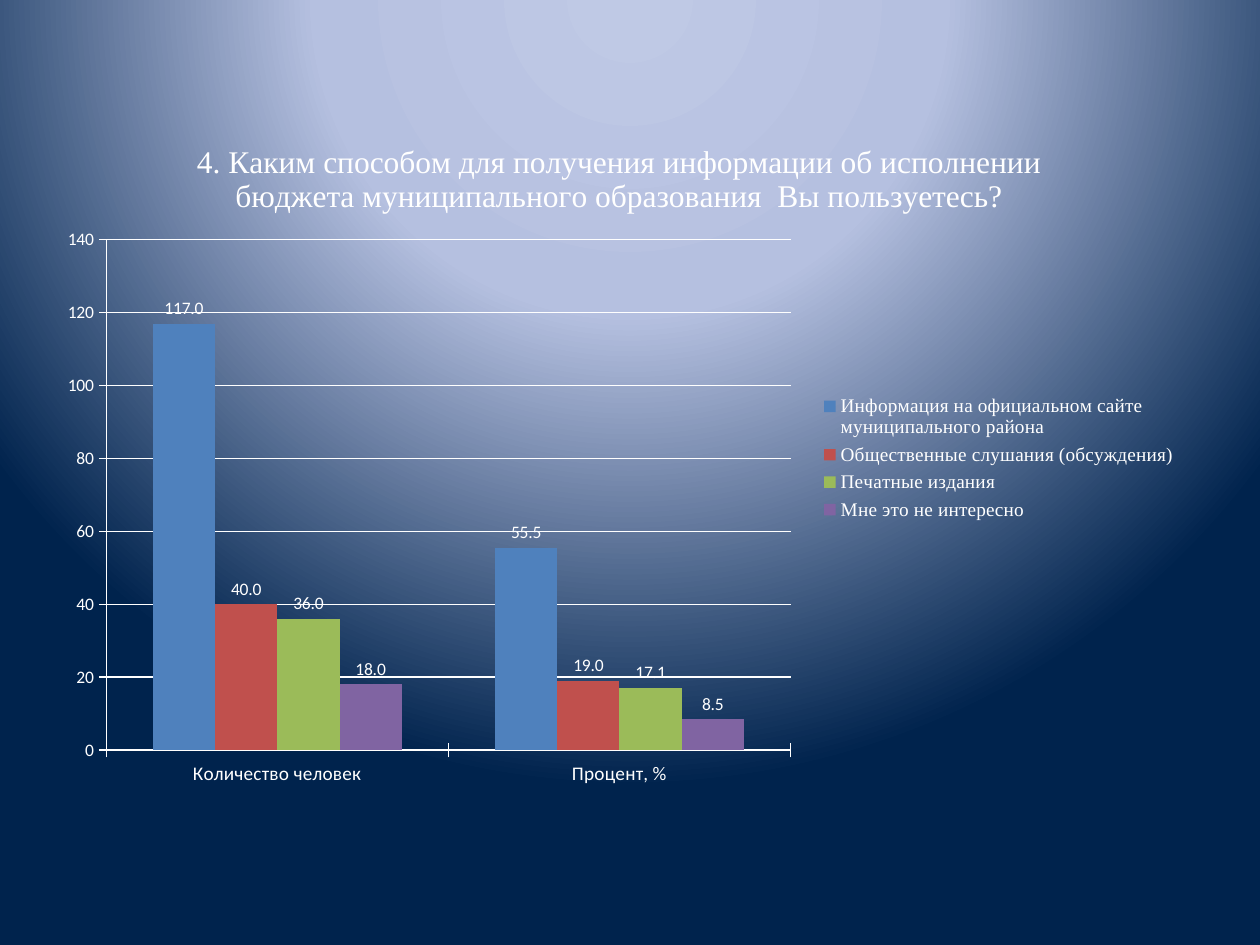
from pptx import Presentation
from pptx.chart.data import CategoryChartData
from pptx.dml.color import RGBColor
from pptx.enum.chart import (XL_CHART_TYPE, XL_LABEL_POSITION,
                             XL_LEGEND_POSITION, XL_TICK_MARK)
from pptx.oxml import parse_xml
from pptx.oxml.ns import nsdecls
from pptx.util import Pt

COLUMNS = XL_CHART_TYPE.COLUMN_CLUSTERED
OUTSIDE_END = XL_LABEL_POSITION.OUTSIDE_END
RIGHT = XL_LEGEND_POSITION.RIGHT
CROSS = XL_TICK_MARK.CROSS

QUESTION = ("4. Каким способом для получения информации об исполнении "
            "бюджета муниципального образования  Вы пользуетесь?")
MEASURES = ["Количество человек", "Процент, %"]
ANSWERS = [
    ("Информация на официальном сайте муниципального района", (117, 55.5), "4F81BD"),
    ("Общественные слушания (обсуждения)", (40, 19), "C0504D"),
    ("Печатные издания", (36, 17.1), "9BBB59"),
    ("Мне это не интересно", (18, 8.5), "8064A2"),
]


def rgb(color):
    return RGBColor.from_string(color)


def layout_xml(x, y, width, height, inner=False):
    """Manual chart layout, in fractions of the chart's size."""
    target = '<c:layoutTarget val="inner"/>' if inner else ""
    return parse_xml(
        f'<c:layout {nsdecls("c")}><c:manualLayout>{target}'
        '<c:xMode val="edge"/><c:yMode val="edge"/>'
        f'<c:x val="{x}"/><c:y val="{y}"/>'
        f'<c:w val="{width}"/><c:h val="{height}"/>'
        '</c:manualLayout></c:layout>')


class SurveySlide:
    text_color = "FFFFFF"
    body_font = "Calibri"
    heading_font = "Times New Roman"

    def __init__(self, slide):
        self.slide = slide

    def style_font(self, font, size, name):
        font.size, font.name, font.bold = Pt(size), name, False
        font.color.rgb = rgb(self.text_color)

    def style_line(self, line):
        line.color.rgb = rgb(self.text_color)
        line.width = Pt(0.75)

    def radial_background(self, stops):
        """Circular gradient centred above the slide; stops are (percent, colour)."""
        self.slide.background.fill.gradient()
        old = self.slide.element.xpath("./p:cSld/p:bg/p:bgPr/a:gradFill")[0]
        stop_xml = "".join(
            f'<a:gs pos="{percent * 1000}"><a:srgbClr val="{color}"/></a:gs>'
            for percent, color in stops)
        old.getparent().replace(old, parse_xml(
            f'<a:gradFill {nsdecls("a")} rotWithShape="1"><a:gsLst>{stop_xml}</a:gsLst>'
            '<a:path path="circle">'
            '<a:fillToRect l="50000" t="-80000" r="50000" b="180000"/>'
            '</a:path></a:gradFill>'))

    def column_chart(self, left, top, width, height, title, categories, series):
        data = CategoryChartData(number_format="0.0")
        data.categories = categories
        for name, values, _ in series:
            data.add_series(name, values)
        chart = self.slide.shapes.add_chart(
            COLUMNS, Pt(left), Pt(top), Pt(width), Pt(height), data).chart
        self.style_font(chart.font, 10, self.body_font)
        self.chart_title(chart, title)
        self.chart_axes(chart)
        self.chart_legend(chart)
        self.chart_columns(chart.plots[0], [color for _, _, color in series])
        plot_area = chart.element.chart.plotArea
        for automatic in plot_area.xpath("./c:layout"):
            plot_area.remove(automatic)
        plot_area.insert(0, layout_xml(0.054, 0.181, 0.595, 0.746, inner=True))

    def chart_title(self, chart, text):
        chart.has_title = True
        heading = chart.chart_title.text_frame
        heading.text = text
        self.style_font(heading.paragraphs[0].font, 18, self.heading_font)
        chart.chart_title.include_in_layout = False

    def chart_axes(self, chart):
        for axis, size in ((chart.category_axis, 11), (chart.value_axis, 10)):
            axis.major_tick_mark = CROSS
            self.style_line(axis.format.line)
            self.style_font(axis.tick_labels.font, size, self.body_font)
        scale = chart.value_axis
        scale.minimum_scale, scale.maximum_scale, scale.major_unit = 0, 140, 20
        scale.tick_labels.number_format = "0"
        scale.tick_labels.number_format_is_linked = False
        self.style_line(scale.major_gridlines.format.line)

    def chart_legend(self, chart):
        chart.has_legend = True
        legend = chart.legend
        legend.position = RIGHT
        legend.include_in_layout = False
        self.style_font(legend.font, 11, self.heading_font)
        for automatic in legend._element.xpath("./c:layout"):
            legend._element.remove(automatic)
        legend._element.xpath("./c:legendPos")[0].addnext(
            layout_xml(0.67, 0.4, 0.32, 0.2))

    def chart_columns(self, plot, colors):
        plot.vary_by_categories = False
        plot.gap_width, plot.overlap = 150, 0
        for answer, color in zip(plot.series, colors):
            answer.format.fill.solid()
            answer.format.fill.fore_color.rgb = rgb(color)
            answer.invert_if_negative = False
            labels = answer.data_labels
            labels.show_value = True
            labels.number_format = "0.0"
            labels.number_format_is_linked = False
            labels.position = OUTSIDE_END
            self.style_font(labels.font, 10, self.body_font)


def main():
    deck = Presentation()
    deck.slide_width, deck.slide_height = Pt(720), Pt(540)
    survey = SurveySlide(deck.slides.add_slide(deck.slide_layouts[6]))
    survey.radial_background([(0, "BFC9E5"), (40, "B5C0E0"), (100, "00234D")])
    survey.column_chart(25.2, 66.24, 657.36, 390.96, QUESTION, MEASURES, ANSWERS)
    deck.save("out.pptx")


if __name__ == "__main__":
    main()
